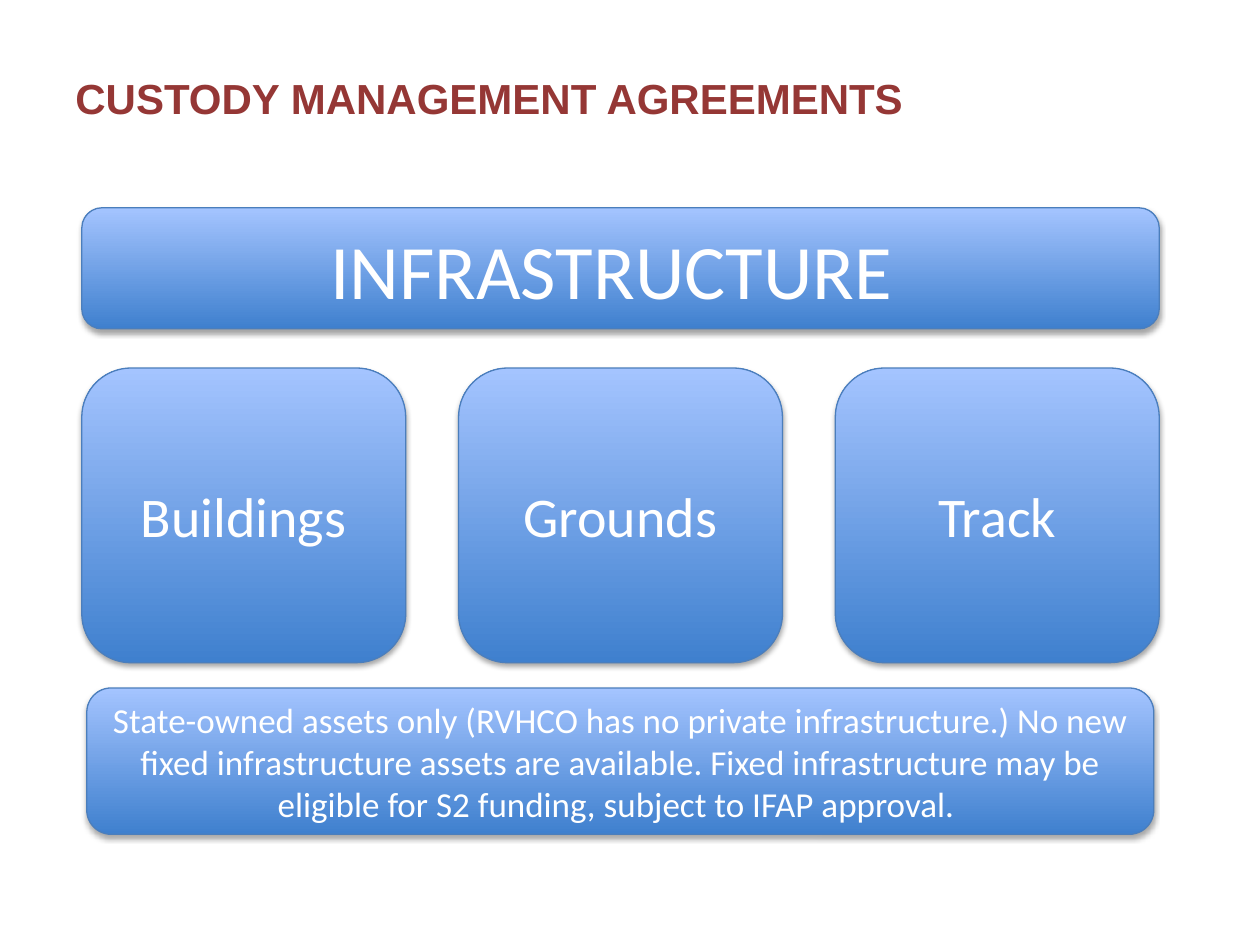
from lxml.etree import SubElement
from pptx import Presentation
from pptx.dml.color import RGBColor
from pptx.enum.shapes import MSO_SHAPE
from pptx.enum.text import MSO_ANCHOR, PP_ALIGN
from pptx.oxml.ns import qn
from pptx.util import Cm, Pt

TITLE = "CUSTODY MANAGEMENT AGREEMENTS"
HEAD = "INFRASTRUCTURE "
CARDS = ["Buildings", "Grounds", "Track"]
NOTE = (
    "State-owned assets only (The body has no private infrastructure.) "
    "No new fixed infrastructure assets are available. "
    "Fixed infrastructure may be eligible for S2 funding, "
    "subject to IFAP approval. "
).replace("The body", "RVHCO")

RED = RGBColor(0x95, 0x37, 0x35)
WHITE = RGBColor(0xFF, 0xFF, 0xFF)
DARK = RGBColor(0x3F, 0x80, 0xCE)
LIGHT = RGBColor(0xA4, 0xC4, 0xFF)
EDGE = RGBColor(0x4B, 0x7E, 0xBC)

# Lengths in centimetres
LEFT, WIDTH = 1.65, 21.72
CARD = 6.53
STEP = (WIDTH - CARD) / (len(CARDS) - 1)


def write(shape, text, size, font, color, align, bold=False):
    frame = shape.text_frame
    frame.word_wrap = True
    frame.vertical_anchor = MSO_ANCHOR.MIDDLE
    para = frame.paragraphs[0]
    para.alignment = align
    run = para.add_run()
    run.text = text
    run.font.size = Pt(size)
    run.font.name = font
    run.font.bold = bold
    run.font.color.rgb = color


def add_shadow(shape):
    """Give the shape a soft shadow straight below it."""
    shape.shadow.inherit = False
    effects = shape._element.spPr.find(qn("a:effectLst"))
    outer = SubElement(
        effects, qn("a:outerShdw"), blurRad=str(Pt(3.1)), dist=str(Pt(1.8)),
        dir="5400000", rotWithShape="0",
    )
    black = SubElement(outer, qn("a:srgbClr"), val="000000")
    SubElement(black, qn("a:alpha"), val="35000")


def add_panel(shapes, text, size, *place):
    """Add a rounded blue panel; place is left, top, width, height in cm."""
    panel = shapes.add_shape(MSO_SHAPE.ROUNDED_RECTANGLE, *map(Cm, place))
    panel.fill.gradient()
    panel.fill.gradient_angle = 90
    for stop, color, spot in zip(panel.fill.gradient_stops, (DARK, LIGHT), (0, 1)):
        stop.color.rgb = color
        stop.position = spot
    panel.line.color.rgb = EDGE
    panel.line.width = Pt(0.75)
    add_shadow(panel)
    write(panel, text, size, "Calibri", WHITE, PP_ALIGN.CENTER)


def main():
    deck = Presentation()
    deck.slide_width, deck.slide_height = Cm(25.4), Cm(19.05)
    slide = deck.slides.add_slide(deck.slide_layouts[6])

    title = slide.shapes.add_textbox(Cm(1.27), Cm(0.76), Cm(22.86), Cm(2.41))
    write(title, TITLE, 24, "Arial", RED, PP_ALIGN.LEFT, bold=True)

    group = slide.shapes.add_group_shape().shapes
    add_panel(group, HEAD, 44, LEFT, 4.19, WIDTH, 2.44)
    for i, name in enumerate(CARDS):
        add_panel(group, name, 32, LEFT + i * STEP, 7.42, CARD, 5.94)

    add_panel(slide.shapes, NOTE, 20, 1.75, 13.87, 21.51, 2.95)
    deck.save("out.pptx")


if __name__ == "__main__":
    main()
